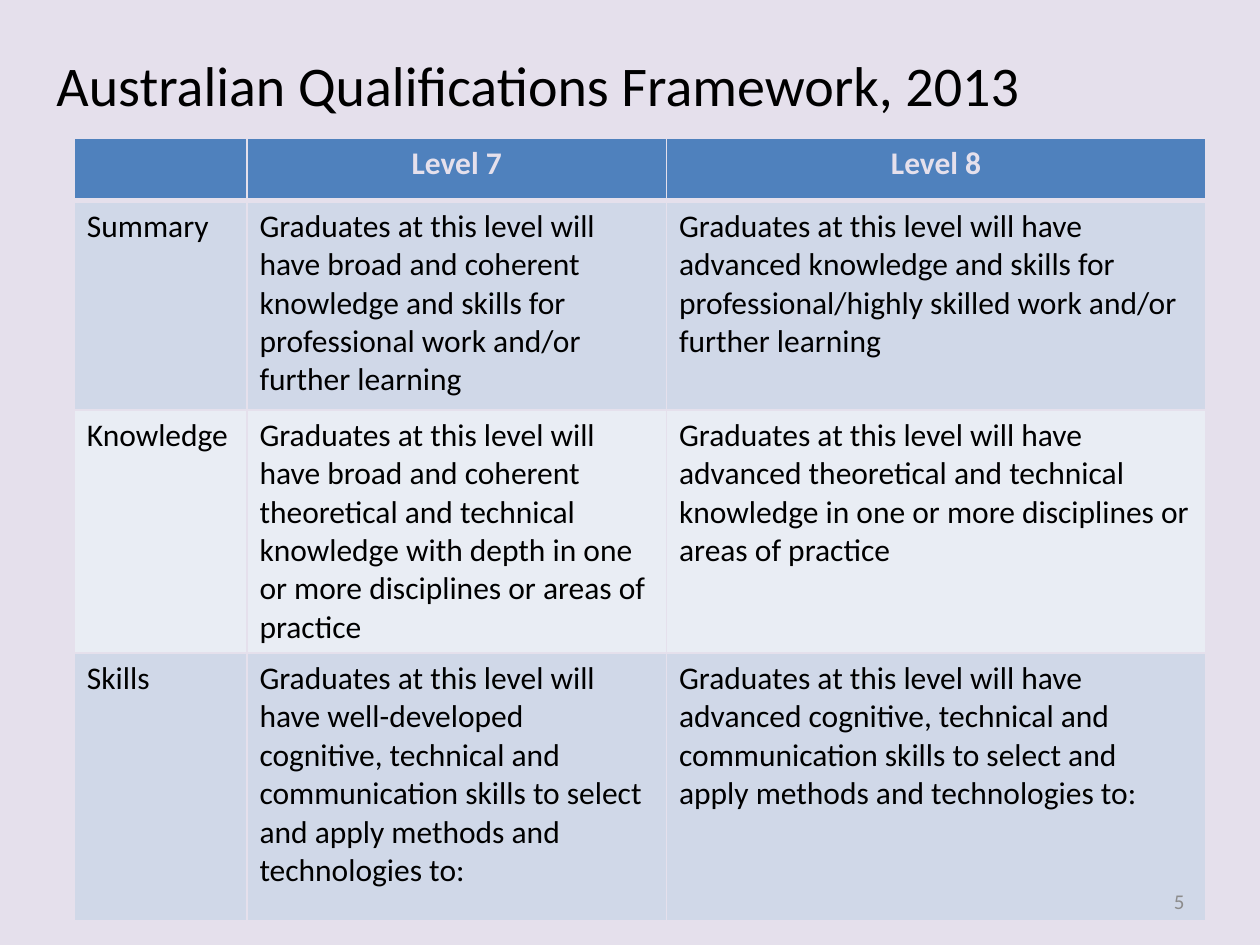
from lxml import etree
from pptx import Presentation, util as u
from pptx.dml.color import RGBColor
from pptx.enum import text
from pptx.oxml.ns import qn

PALE, BLUE, BLACK = "E5E0EC", "4F81BD", "000000"
BANDS = ["D0D8E8", "E9EDF4"]
COLUMNS = [98.64, 239.76, 308.16]
HEIGHTS = [36, 119.5, 138.25, 152.65]
ROWS = [
    ["", "Level 7", "Level 8"],
    ["Summary",
     "Graduates at this level will have broad and coherent knowledge and skills "
     "for professional work and/or further learning",
     "Graduates at this level will have advanced knowledge and skills for\n"
     "professional/highly skilled work and/or further learning"],
    ["Knowledge",
     "Graduates at this level will have broad and coherent theoretical and technical "
     "knowledge with depth in one or more disciplines or areas of\npractice",
     "Graduates at this level will have advanced theoretical and technical\n"
     "knowledge in one or more disciplines or areas of practice"],
    ["Skills",
     "Graduates at this level will have well-developed cognitive, technical and\n"
     "communication skills to select and apply methods and\ntechnologies to:",
     "Graduates at this level will have advanced cognitive, technical and\n"
     "communication skills to select and apply methods and technologies to:"],
]


def rgb(value):
    """Return the colour for a hex string."""
    return RGBColor.from_string(value)


def paint(fill, color):
    """Give a fill one solid colour."""
    fill.solid()
    fill.fore_color.rgb = rgb(color)


def write(tf, content, size=18, color=BLACK, bold=False, align=text.PP_ALIGN.LEFT):
    """Write text into a frame, one paragraph a line."""
    for i, line in enumerate(content.split("\n")):
        p = tf.paragraphs[0] if i == 0 else tf.add_paragraph()
        p.alignment = align
        r = p.add_run()
        r.text = line
        r.font.name, r.font.size, r.font.bold = "Calibri", u.Pt(size), bold
        r.font.color.rgb = rgb(color)


def add_text(s, box, content, wrap=True, anchor=text.MSO_ANCHOR.TOP, **style):
    """Add a text box at left, top, width, height."""
    tf = s.shapes.add_textbox(*map(u.Pt, box)).text_frame
    tf.word_wrap = wrap
    tf.vertical_anchor = anchor
    write(tf, content, **style)


def set_borders(cell, color, **widths):
    """Draw the four edges of a cell, 1 point wide unless told otherwise."""
    pr = cell._tc.get_or_add_tcPr()
    for i, side in enumerate("LRTB"):
        ln = etree.Element(qn(f"a:ln{side}"), w=str(u.Pt(widths.get(side, 1))))
        solid = etree.SubElement(ln, qn("a:solidFill"))
        etree.SubElement(solid, qn("a:srgbClr"), val=color)
        pr.insert(i, ln)


def add_levels_table(s, left, top):
    """Add the table that compares the two levels."""
    frame = s.shapes.add_table(len(ROWS), len(COLUMNS), u.Pt(left), u.Pt(top),
                               u.Pt(sum(COLUMNS)), u.Pt(sum(HEIGHTS)))
    table = frame.table
    for column, width in zip(table.columns, COLUMNS):
        column.width = u.Pt(width)
    for i, (row, height, contents) in enumerate(zip(table.rows, HEIGHTS, ROWS)):
        row.height = u.Pt(height)
        header = i == 0
        style = dict(color=PALE, bold=True, align=text.PP_ALIGN.CENTER) if header else {}
        edges = {0: {"B": 3}, 1: {"T": 3}}.get(i, {})
        for cell, content in zip(row.cells, contents):
            paint(cell.fill, BLUE if header else BANDS[(i - 1) % 2])
            set_borders(cell, PALE, **edges)
            if content:
                write(cell.text_frame, content, **style)


def main():
    """Build the slide and save it."""
    prs = Presentation()
    prs.slide_width, prs.slide_height = u.Pt(720), u.Pt(540)
    s = prs.slides.add_slide(prs.slide_layouts[6])
    paint(s.background.fill, PALE)
    add_levels_table(s, 42.5, 78.75)
    add_text(s, (25.2, 25.2, 571, 46), "Australian Qualifications Framework, 2013",
             wrap=False, size=32)
    add_text(s, (516, 500.5, 168, 28.75), "5", anchor=text.MSO_ANCHOR.MIDDLE,
             size=12, color="8C8C8C", align=text.PP_ALIGN.RIGHT)
    prs.save("out.pptx")


if __name__ == "__main__":
    main()
